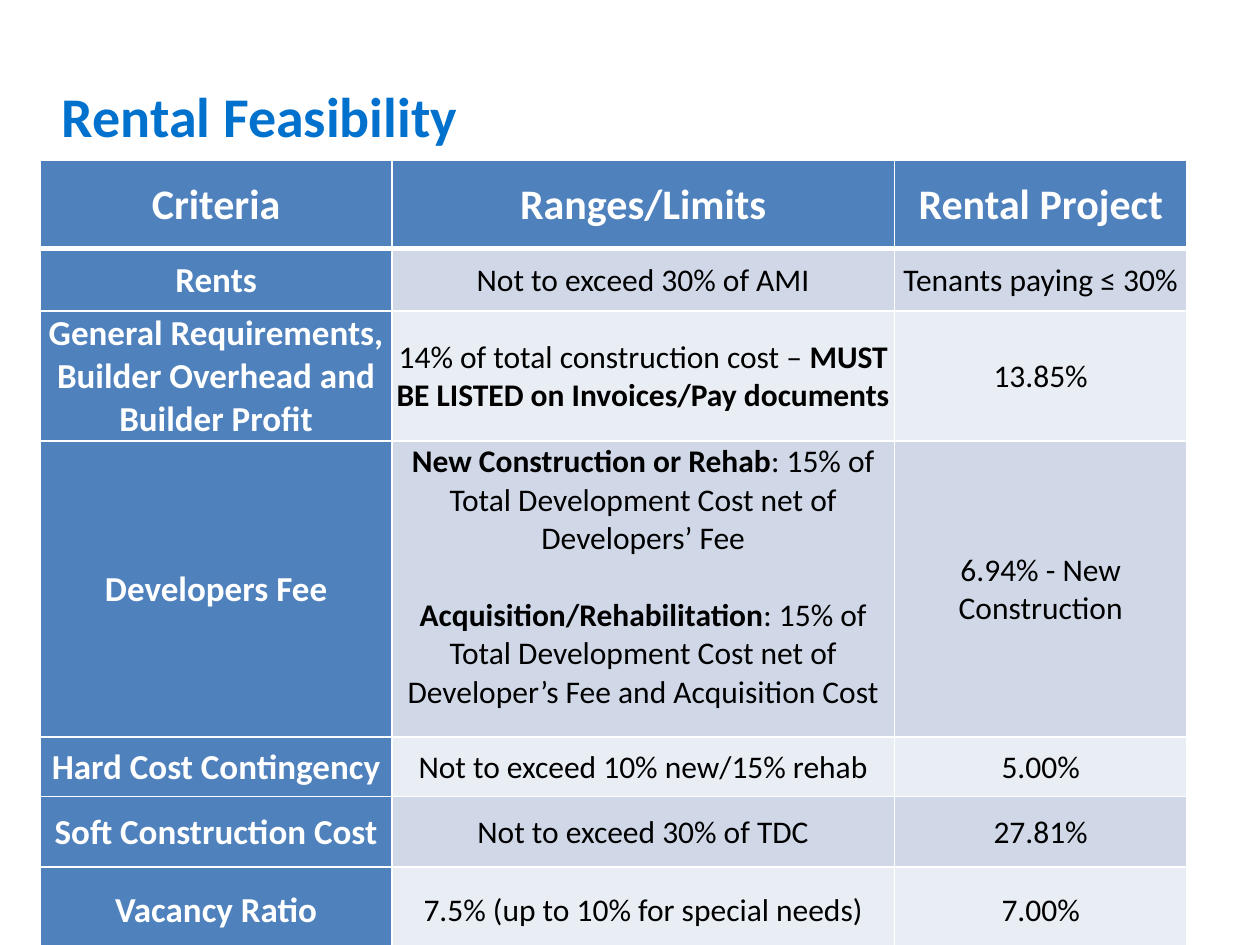
"""Build the Rental Feasibility slide with its criteria table."""
from lxml.etree import SubElement
from pptx import Presentation
from pptx.dml.color import RGBColor
from pptx.enum.text import MSO_ANCHOR, PP_ALIGN
from pptx.oxml.ns import qn
from pptx.util import Inches, Pt

TITLE_BLUE = RGBColor(0x00, 0x72, 0xCE)
HEADER_BLUE = RGBColor(0x4F, 0x81, 0xBD)
DARK_BAND = RGBColor(0xD0, 0xD8, 0xE8)
LIGHT_BAND = RGBColor(0xE9, 0xED, 0xF4)
WHITE = RGBColor(0xFF, 0xFF, 0xFF)
BLACK = RGBColor(0x00, 0x00, 0x00)

FONT = "Calibri"
COLUMN_WIDTHS = [2.79, 3.99, 2.32]
ROW_HEIGHTS = [0.7, 0.5, 1.03, 2.35, 0.47, 0.56, 0.69]
FEE_ROW = 3

ROWS = [
    ["Criteria", "Ranges/Limits", "Rental Project"],
    ["Rents", "Not to exceed 30% of AMI", "Tenants paying ≤ 30%"],
    ["General Requirements, Builder Overhead and Builder Profit",
     [[("14% of total construction cost – ", False),
       ("MUST BE LISTED on Invoices/Pay documents", True)]],
     "13.85%"],
    ["Developers Fee",
     [[("New Construction or Rehab", True),
       (": 15% of Total Development Cost net of Developers’ Fee", False)],
      [("Acquisition/Rehabilitation", True),
       (": 15% of Total Development Cost net of Developer’s Fee and Acquisition Cost", False)]],
     "6.94% - New Construction"],
    ["Hard Cost Contingency", "Not to exceed 10% new/15% rehab", "5.00%"],
    ["Soft Construction Cost", "Not to exceed 30% of TDC", "27.81%"],
    ["Vacancy Ratio", "7.5% (up to 10% for special needs)", "7.00%"],
]


def add_border(cell, side, points):
    line = SubElement(cell._tc.get_or_add_tcPr(), qn(f"a:{side}"), w=str(Pt(points)))
    fill = SubElement(line, qn("a:solidFill"))
    SubElement(fill, qn("a:srgbClr"), val=str(WHITE))


presentation = Presentation()
presentation.slide_width = Inches(10)
presentation.slide_height = Inches(7.5)
slide = presentation.slides.add_slide(presentation.slide_layouts[5])

title = slide.shapes.title
title.left, title.top = Inches(0.39), Inches(0.66)
title.width, title.height = Inches(8.19), Inches(0.5)
title.text_frame.text = "Rental Feasibility"
title.text_frame.vertical_anchor = MSO_ANCHOR.MIDDLE
paragraph = title.text_frame.paragraphs[0]
paragraph.alignment = PP_ALIGN.LEFT
paragraph.font.name = FONT
paragraph.font.size = Pt(32)
paragraph.font.bold = True
paragraph.font.color.rgb = TITLE_BLUE

table = slide.shapes.add_table(
    len(ROWS), len(COLUMN_WIDTHS), Inches(0.32), Inches(1.27),
    Inches(sum(COLUMN_WIDTHS)), Inches(sum(ROW_HEIGHTS))).table
table.first_col = True
for column, width in zip(table.columns, COLUMN_WIDTHS):
    column.width = Inches(width)
for row, height in zip(table.rows, ROW_HEIGHTS):
    row.height = Inches(height)

for row_index, row_content in enumerate(ROWS):
    for column_index, content in enumerate(row_content):
        cell = table.cell(row_index, column_index)
        is_heading = row_index == 0 or column_index == 0
        cell.margin_left = cell.margin_right = cell.margin_top = Inches(0.01)
        cell.margin_bottom = Inches(0)
        cell.vertical_anchor = MSO_ANCHOR.MIDDLE
        add_border(cell, "lnL", 1)
        add_border(cell, "lnR", 1)
        add_border(cell, "lnT", 3 if row_index == 1 else 1)
        add_border(cell, "lnB", 3 if row_index == 0 else 1)
        band = DARK_BAND if row_index % 2 else LIGHT_BAND
        cell.fill.solid()
        cell.fill.fore_color.rgb = HEADER_BLUE if is_heading else band

        paragraphs = [[(content, is_heading)]] if isinstance(content, str) else content
        for paragraph_index, runs in enumerate(paragraphs):
            text_frame = cell.text_frame
            paragraph = text_frame.add_paragraph() if paragraph_index else text_frame.paragraphs[0]
            paragraph.alignment = PP_ALIGN.CENTER
            if paragraph_index:
                paragraph.space_before = Pt(22)
            paragraph.font.name = FONT
            paragraph.font.size = Pt(24 if row_index == 0 else 20 if is_heading else 18)
            paragraph.font.color.rgb = WHITE if is_heading else BLACK
            for text, bold in runs:
                run = paragraph.add_run()
                run.text = text
                run.font.bold = bold

table.cell(FEE_ROW, 1).margin_bottom = Inches(0.2)

presentation.save("out.pptx")
